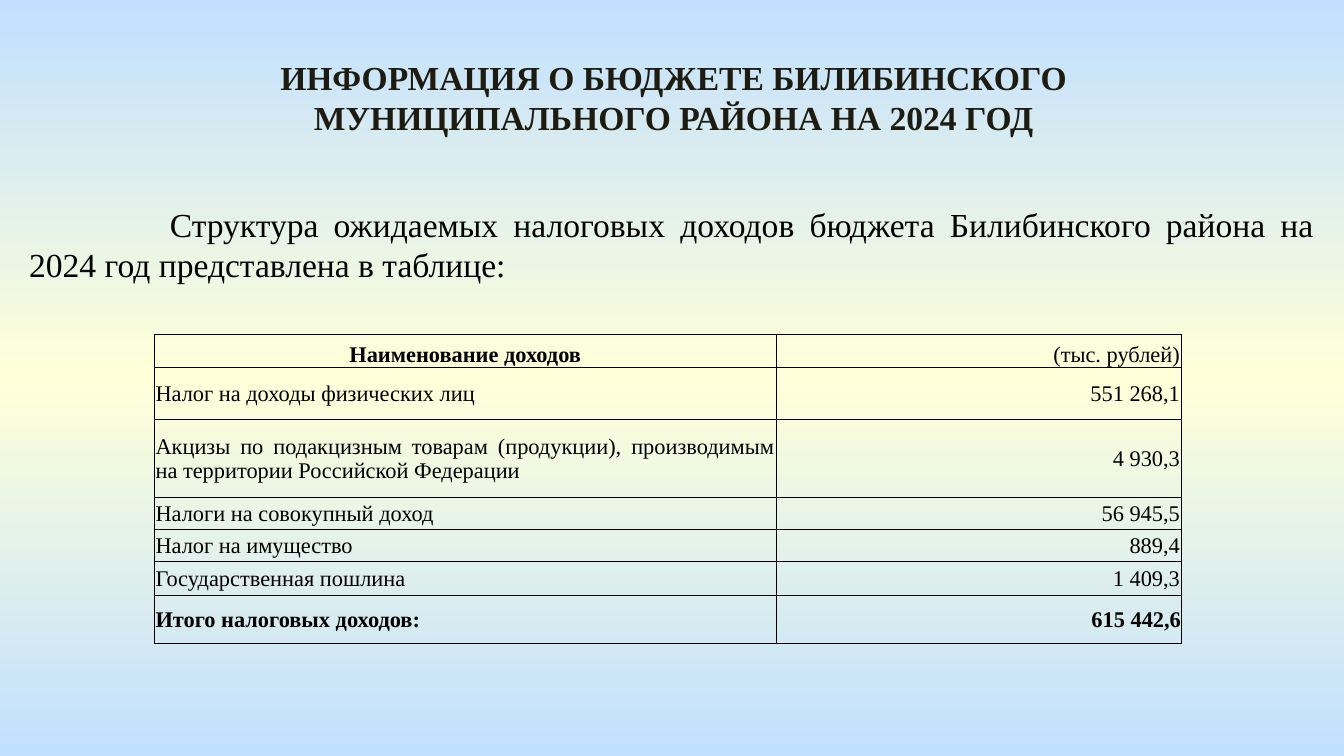
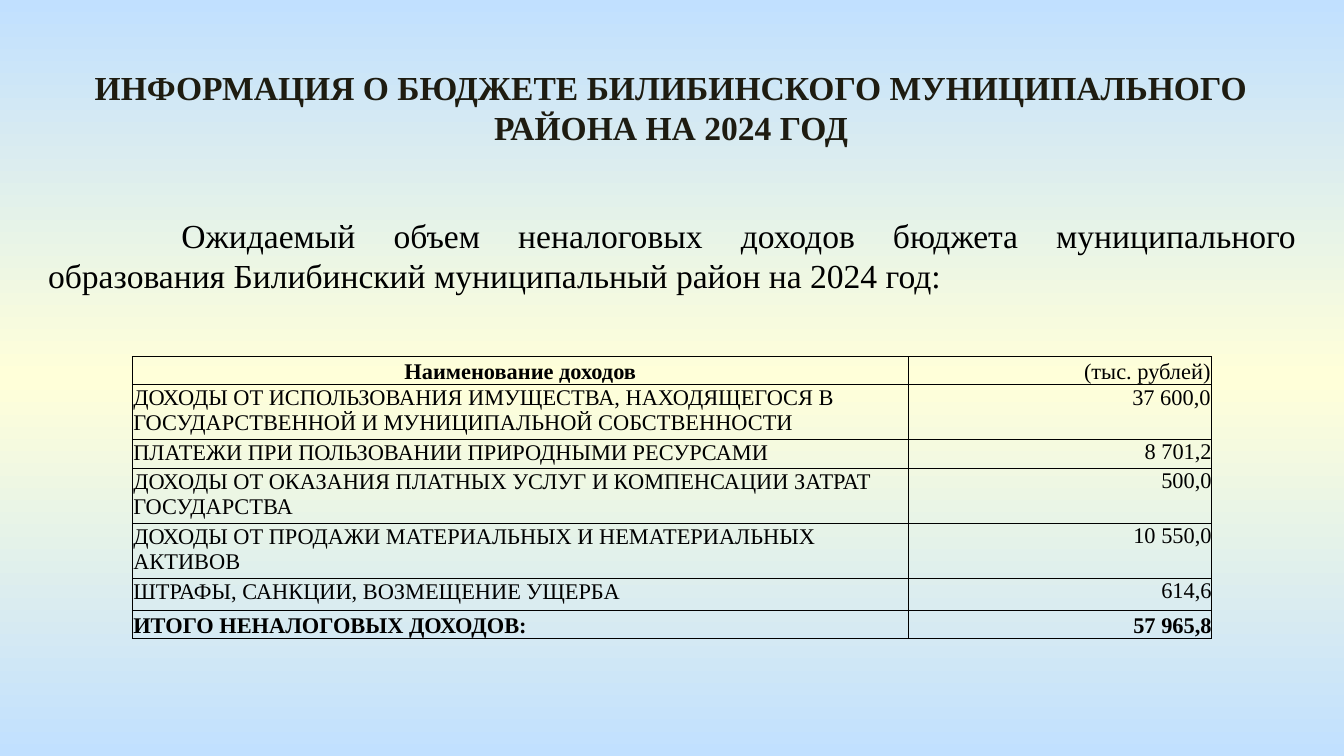
from copy import deepcopy

from lxml.etree import SubElement
from pptx import Presentation
from pptx.dml.color import RGBColor
from pptx.enum.text import MSO_ANCHOR, MSO_AUTO_SIZE, PP_ALIGN
from pptx.oxml.ns import qn
from pptx.util import Cm, Pt

# Shared look
SERIF = "Times New Roman"
INK, TITLE_INK = "000000", "1E1C11"
BACKDROP = [(0, "C1E0FF"), (0.5, "FFFFD9"), (1, "C1E0FF")]
TITLE_FORMAT = {"size": Pt(18), "bold": True, "name": SERIF}
LEAD_FORMAT = {"size": Pt(18), "bold": False, "name": SERIF}
CELL_FORMAT = {"size": Pt(12), "name": SERIF}
CELL_INSET = 0.02
TITLE = "ИНФОРМАЦИЯ О БЮДЖЕТЕ БИЛИБИНСКОГО МУНИЦИПАЛЬНОГО РАЙОНА НА 2024 ГОД"
HEADER = ("Наименование доходов", "(тыс. рублей)")

TAX_PAGE = {
    "title_at": (2.92, 0.94, 19.63, 1.8),
    "lead_at": (0.3, 3.73, 24.79, 1.8),
    "lead_indent": 2.66,
    "lead": "Структура ожидаемых налоговых доходов бюджета Билибинского района "
            "на 2024 год представлена в таблице:",
    "table": {
        "corner": (2.92, 6.33),
        "columns": (11.75, 7.65),
        "heights": (0.62, 0.98, 1.47, 0.6, 0.62, 0.64, 0.91),
        "label_align": PP_ALIGN.JUSTIFY,
        "anchor": MSO_ANCHOR.MIDDLE,
        "total_anchor": MSO_ANCHOR.MIDDLE,
        "flush_from": 6,
        "rows": [
            ("Налог на доходы физических лиц", "551 268,1"),
            ("Акцизы по подакцизным товарам (продукции), производимым "
             "на территории Российской Федерации", "4 930,3"),
            ("Налоги на совокупный доход", "56 945,5"),
            ("Налог на имущество", "889,4"),
            ("Государственная пошлина", "1 409,3"),
            ("Итого налоговых доходов:", "615 442,6"),
        ],
    },
}
NON_TAX_PAGE = {
    "title_at": (0.99, 1.14, 23.39, 1.8),
    "lead_at": (0.66, 3.94, 24.1, 1.8),
    "lead_indent": 2.52,
    "lead": "Ожидаемый объем неналоговых доходов бюджета муниципального "
            "образования Билибинский муниципальный район на 2024 год:",
    "table": {
        "corner": (2.5, 6.74),
        "columns": (14.67, 5.73),
        "heights": (0.53, 1.04, 0.55, 1.04, 1.02, 0.6, 0.5),
        "label_align": PP_ALIGN.LEFT,
        "anchor": MSO_ANCHOR.TOP,
        "total_anchor": MSO_ANCHOR.BOTTOM,
        "flush_from": 2,
        "rows": [
            ("ДОХОДЫ ОТ ИСПОЛЬЗОВАНИЯ ИМУЩЕСТВА, НАХОДЯЩЕГОСЯ В "
             "ГОСУДАРСТВЕННОЙ И МУНИЦИПАЛЬНОЙ СОБСТВЕННОСТИ", "37 600,0"),
            ("ПЛАТЕЖИ ПРИ ПОЛЬЗОВАНИИ ПРИРОДНЫМИ РЕСУРСАМИ", "8 701,2"),
            ("ДОХОДЫ ОТ ОКАЗАНИЯ ПЛАТНЫХ УСЛУГ И КОМПЕНСАЦИИ ЗАТРАТ "
             "ГОСУДАРСТВА", "500,0"),
            ("ДОХОДЫ ОТ ПРОДАЖИ МАТЕРИАЛЬНЫХ И НЕМАТЕРИАЛЬНЫХ АКТИВОВ",
             "10 550,0"),
            ("ШТРАФЫ, САНКЦИИ, ВОЗМЕЩЕНИЕ УЩЕРБА", "614,6"),
            ("ИТОГО НЕНАЛОГОВЫХ ДОХОДОВ:", "57 965,8"),
        ],
    },
}


def color(code):
    return RGBColor.from_string(code)


def set_values(target, values):
    for name, value in values.items():
        setattr(target, name, value)


def paint_backdrop(master):
    """Give every slide the vertical three-stop gradient."""
    fill = master.background.fill
    fill.gradient()
    fill.gradient_angle = 270
    stops = master.element.find(".//" + qn("a:gsLst"))
    stops.append(deepcopy(stops[0]))
    for stop, (position, code) in zip(fill.gradient_stops, BACKDROP):
        stop.position = position
        stop.color.rgb = color(code)


def write(frame, text, align, font_format, ink=INK):
    para = frame.paragraphs[0]
    para.alignment = align
    span = para.add_run()
    span.text = text
    set_values(span.font, font_format)
    span.font.color.rgb = color(ink)
    return para


def place(box, at):
    set_values(box, dict(zip(("left", "top", "width", "height"), map(Cm, at))))
    set_values(box.text_frame, {
        "word_wrap": True,
        "vertical_anchor": MSO_ANCHOR.TOP,
        "auto_size": MSO_AUTO_SIZE.SHAPE_TO_FIT_TEXT,
    })


def add_title(page, at):
    box = page.shapes.title
    place(box, at)
    write(box.text_frame, TITLE, PP_ALIGN.CENTER, TITLE_FORMAT, TITLE_INK)


def add_lead(page, text, at, indent):
    box = page.shapes.add_textbox(*map(Cm, at))
    place(box, at)
    para = write(box.text_frame, text, PP_ALIGN.JUSTIFY, LEAD_FORMAT)
    para._p.get_or_add_pPr().set("indent", str(Cm(indent)))


def add_borders(cell):
    properties = cell._tc.get_or_add_tcPr()
    for side in ("a:lnL", "a:lnR", "a:lnT", "a:lnB"):
        line = SubElement(properties, qn(side), w=str(Pt(0.5)))
        paint = SubElement(line, qn("a:solidFill"))
        SubElement(paint, qn("a:srgbClr"), val=INK)


def fill_cell(cell, text, align, anchor, bold, inset):
    add_borders(cell)
    cell.fill.background()
    set_values(cell, {
        "margin_left": Cm(inset), "margin_top": Cm(inset),
        "margin_right": Cm(inset), "margin_bottom": Cm(0),
        "vertical_anchor": anchor,
    })
    write(cell.text_frame, text, align, CELL_FORMAT | {"bold": bold})


def add_income_table(page, data):
    rows = [HEADER, *data["rows"]]
    columns, heights = data["columns"], data["heights"]
    size = sum(columns), sum(heights)
    table = page.shapes.add_table(
        len(rows), len(columns), *map(Cm, data["corner"] + size)).table
    set_values(table, {"first_row": False, "horz_banding": False})
    for column, width in zip(table.columns, columns):
        column.width = Cm(width)
    for row, height in zip(table.rows, heights):
        row.height = Cm(height)

    last = len(rows) - 1
    for index, (label, amount) in enumerate(rows):
        anchor = {0: MSO_ANCHOR.BOTTOM, last: data["total_anchor"]}.get(
            index, data["anchor"])
        align = data["label_align"] if index else PP_ALIGN.CENTER
        inset = 0 if index >= data["flush_from"] else CELL_INSET
        fill_cell(table.cell(index, 0), label, align, anchor,
                  index in (0, last), CELL_INSET)
        fill_cell(table.cell(index, 1), amount, PP_ALIGN.RIGHT, anchor,
                  index == last, inset)


def main():
    deck = Presentation()
    deck.slide_width, deck.slide_height = Cm(25.4), Cm(14.29)
    paint_backdrop(deck.slide_master)
    title_only = deck.slide_layouts.get_by_name("Title Only")
    for content in (TAX_PAGE, NON_TAX_PAGE):
        page = deck.slides.add_slide(title_only)
        add_title(page, content["title_at"])
        add_lead(page, content["lead"], content["lead_at"],
                 content["lead_indent"])
        add_income_table(page, content["table"])
    deck.save("out.pptx")


if __name__ == "__main__":
    main()
